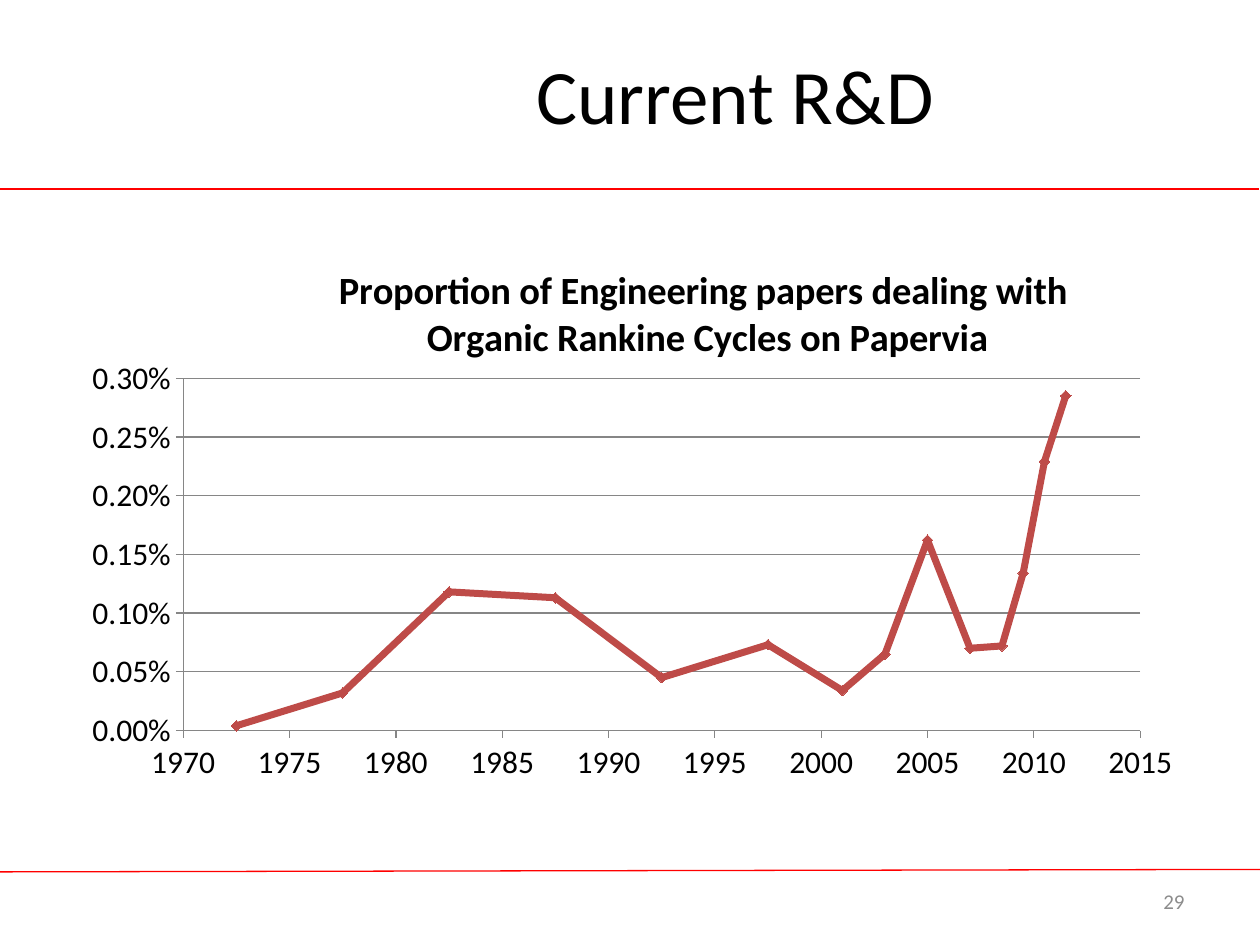
import pptx
import pptx.chart.data
import pptx.dml.color
import pptx.enum.chart
import pptx.enum.shapes
import pptx.enum.text
import pptx.oxml
import pptx.oxml.ns
import pptx.util
from dataclasses import dataclass

Inches = pptx.util.Inches
Pt = pptx.util.Pt
Align = pptx.enum.text.PP_ALIGN
Kind = pptx.enum.chart


@dataclass
class Theme:
    font: str = "Calibri"
    ink: str = "000000"
    gray: str = "8C8C8C"
    grid: str = "868686"
    rule: str = "FF0000"
    curve: str = "BE4B48"
    head: float = 44
    title: float = 22
    label: float = 18
    note: float = 12


def color(code):
    return pptx.dml.color.RGBColor.from_string(code)


def style(font, face, size, ink, bold=False):
    font.name, font.size, font.bold = face, Pt(size), bold
    font.color.rgb = color(ink)


def write(frame, text, face, size, ink, bold=False, align=Align.CENTER):
    """Fill a text frame, one paragraph per line of text."""
    for i, line in enumerate(text.split("\n")):
        para = frame.add_paragraph() if i else frame.paragraphs[0]
        para.alignment = align
        run = para.add_run()
        run.text = line
        style(run.font, face, size, ink, bold)


def layout(inner=False, **parts):
    """Build a manual chart layout from fractions of the chart."""
    tags = '<c:layoutTarget val="inner"/>' if inner else ""
    tags += "".join(f'<c:{k}Mode val="edge"/>' for k in "xy")
    tags += "".join(f'<c:{k} val="{v}"/>' for k, v in parts.items())
    space = pptx.oxml.ns.nsdecls("c")
    return pptx.oxml.parse_xml(
        f"<c:layout {space}><c:manualLayout>{tags}</c:manualLayout></c:layout>")


def place(node, item, spot):
    """Put a layout in a chart part, in place of any it has."""
    for old in node.findall(pptx.oxml.ns.qn("c:layout")):
        node.remove(old)
    node.insert(spot, item)


class Deck:
    def __init__(self, theme):
        self.theme = theme
        self.file = pptx.Presentation()
        self.file.slide_width = Inches(10)
        self.file.slide_height = Inches(7.5)
        self.slide = self.file.slides.add_slide(self.file.slide_layouts[6])

    def rule(self, *ends):
        line = self.slide.shapes.add_connector(
            pptx.enum.shapes.MSO_CONNECTOR.STRAIGHT, *map(Inches, ends))
        line.line.color.rgb = color(self.theme.rule)
        line.line.width = Pt(0.75)
        line._element.spPr.append(pptx.oxml.parse_xml(
            f"<a:effectLst {pptx.oxml.ns.nsdecls('a')}/>"))

    def text(self, text, box, **form):
        frame = self.slide.shapes.add_textbox(*map(Inches, box)).text_frame
        frame.word_wrap = True
        frame.vertical_anchor = pptx.enum.text.MSO_ANCHOR.MIDDLE
        write(frame, text, self.theme.font, **form)

    def axis(self, axis, low, high, step, form, grid):
        axis.minimum_scale, axis.maximum_scale = low, high
        axis.major_unit = step
        axis.major_tick_mark = Kind.XL_TICK_MARK.OUTSIDE
        axis.minor_tick_mark = Kind.XL_TICK_MARK.NONE
        axis.has_major_gridlines = grid
        lines = [axis.format.line]
        if grid:
            lines.append(axis.major_gridlines.format.line)
        for line in lines:
            line.color.rgb = color(self.theme.grid)
            line.width = Pt(0.75)
        axis.tick_labels.number_format = form
        axis.tick_labels.number_format_is_linked = False

    def scatter(self, title, points, box):
        theme = self.theme
        data = pptx.chart.data.XyChartData()
        series = data.add_series("Series 1")
        for year, share in points:
            series.add_data_point(year, share)
        chart = self.slide.shapes.add_chart(
            Kind.XL_CHART_TYPE.XY_SCATTER_SMOOTH, *map(Inches, box), data).chart
        style(chart.font, theme.font, theme.label, theme.ink)
        chart.has_legend = False
        chart.has_title = True
        write(chart.chart_title.text_frame, title, theme.font,
              theme.title, theme.ink, bold=True)
        chart.chart_title.include_in_layout = False
        place(chart.chart_title._element, layout(x=0.24, y=0.07), 1)
        area = chart._chartSpace.chart.plotArea
        place(area, layout(True, x=0.106, y=0.268, w=0.844, h=0.599), 0)

        self.axis(chart.category_axis, 1970, 2015, 5, "0", False)
        self.axis(chart.value_axis, 0, 0.003, 0.0005, "0.00%", True)
        plot = chart.plots[0]
        plot.vary_by_categories = False
        curve = plot.series[0]
        curve.smooth = True
        curve.format.line.color.rgb = color(theme.curve)
        curve.format.line.width = Pt(4)
        mark = curve.marker
        mark.style, mark.size = Kind.XL_MARKER_STYLE.DIAMOND, 6
        mark.format.fill.solid()
        mark.format.fill.fore_color.rgb = color(theme.curve)
        mark.format.line.color.rgb = color(theme.curve)


POINTS = [
    (2011.5, 0.00285), (2010.5, 0.00229), (2009.5, 0.00134),
    (2008.5, 0.00072), (2007, 0.0007), (2005, 0.00162), (2003, 0.00065),
    (2001, 0.00034), (1997.5, 0.00073), (1992.5, 0.00045),
    (1987.5, 0.00113), (1982.5, 0.00118), (1977.5, 0.00032),
    (1972.5, 0.00004),
]


def main():
    theme = Theme()
    deck = Deck(theme)
    deck.rule(0, 6.92, 10, 6.9)
    deck.rule(0, 1.5, 9.99, 1.5)
    deck.text("Current R&D", (1.67, 0.08, 8.33, 1.33),
              size=theme.head, ink=theme.ink)
    deck.text("29", (7.17, 6.95, 2.33, 0.4),
              size=theme.note, ink=theme.gray, align=Align.RIGHT)
    deck.scatter("Proportion of Engineering papers dealing with \n"
                 "Organic Rankine Cycles on Papervia",
                 POINTS, (0.5, 1.75, 9, 4.67))
    deck.file.save("out.pptx")


if __name__ == "__main__":
    main()
